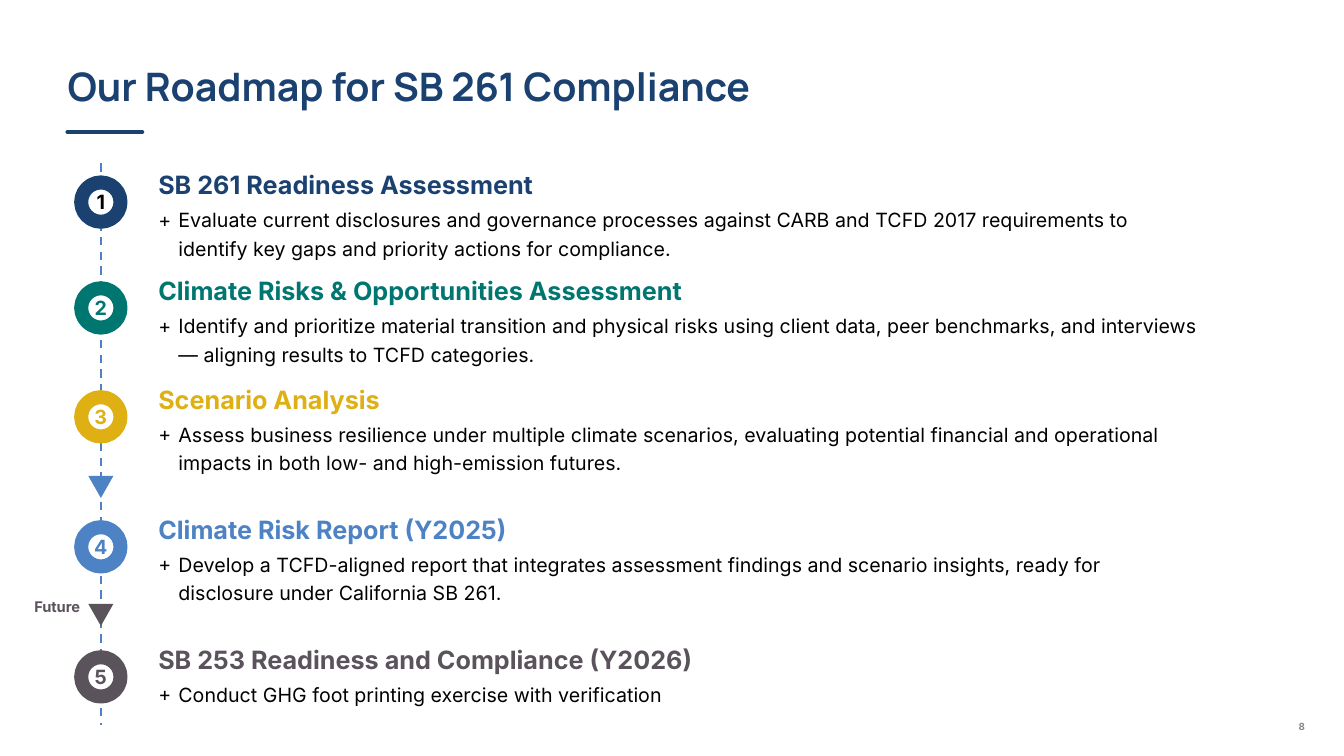
"""Build the SB 261 compliance roadmap slide."""
from lxml import etree
from pptx import Presentation
from pptx.dml.color import RGBColor
from pptx.enum.dml import MSO_LINE
from pptx.enum.shapes import MSO_CONNECTOR, MSO_SHAPE
from pptx.enum.text import MSO_ANCHOR, PP_ALIGN
from pptx.oxml.ns import qn
from pptx.util import Inches, Pt

STRAIGHT = MSO_CONNECTOR.STRAIGHT
OVAL = MSO_SHAPE.OVAL
TRIANGLE = MSO_SHAPE.ISOSCELES_TRIANGLE
DASH = MSO_LINE.DASH
MIDDLE = MSO_ANCHOR.MIDDLE
BOTTOM = MSO_ANCHOR.BOTTOM
CENTER = PP_ALIGN.CENTER

NAVY, BLUE, GRAY = "1B4171", "4D82C5", "5A535B"
TEAL, GOLD = "007671", "DFB014"
BLACK, WHITE = "000000", "FFFFFF"
AXIS_X = 1.0
CIRCLE_SIZE = 0.39
TRIANGLE_WIDTH, TRIANGLE_HEIGHT = 0.25, 0.22

STEPS = [
    (1.81, NAVY, BLACK, "SB 261 Readiness Assessment",
     "Evaluate current disclosures and governance processes against CARB and TCFD 2017 "
     "requirements to identify key gaps and priority actions for compliance."),
    (2.86, TEAL, TEAL, "Climate Risks & Opportunities Assessment",
     "Identify and prioritize material transition and physical risks using client data, "
     "peer benchmarks, and interviews — aligning results to TCFD categories."),
    (3.94, GOLD, GOLD, "Scenario Analysis",
     "Assess business resilience under multiple climate scenarios, evaluating potential "
     "financial and operational impacts in both low- and high-emission futures."),
    (5.23, BLUE, BLUE, "Climate Risk Report (Y2025)",
     "Develop a TCFD-aligned report that integrates assessment findings and scenario "
     "insights, ready for disclosure under California SB 261."),
    (6.52, GRAY, GRAY, "SB 253 Readiness and Compliance (Y2026)",
     "Conduct GHG foot printing exercise with verification"),
]


def color(value):
    return RGBColor.from_string(value)


def write(para, text, size, ink, bold=True, font="Inter"):
    para.text = text
    para.font.name = font
    para.font.size = Pt(size)
    para.font.bold = bold
    para.font.color.rgb = color(ink)


deck = Presentation()
deck.slide_width, deck.slide_height = Inches(13.33), Inches(7.5)
page = deck.slides.add_slide(deck.slide_layouts[5])
shapes = page.shapes

title = shapes.title
title.left, title.top = Inches(0.67), Inches(0.61)
title.width, title.height = Inches(12), Inches(0.48)
frame = title.text_frame
frame.margin_left = frame.margin_right = frame.margin_top = frame.margin_bottom = 0
frame.vertical_anchor = BOTTOM
heading = frame.paragraphs[0]
write(heading, "Our Roadmap for SB 261 Compliance", 28, NAVY, font="Manrope")
heading.alignment = PP_ALIGN.LEFT
heading.line_spacing = 0.9

accent = shapes.add_connector(STRAIGHT, Inches(0.67), Inches(1.31), Inches(1.41), Inches(1.31))
axis = shapes.add_connector(STRAIGHT, Inches(AXIS_X), Inches(1.62), Inches(AXIS_X), Inches(7.19))
for connector, ink, width in [(accent, NAVY, 3), (axis, BLUE, 1.5)]:
    connector.line.color.rgb = color(ink)
    connector.line.width = Pt(width)
    etree.SubElement(connector.element.spPr, qn("a:effectLst"))
accent.element.spPr.find(qn("a:ln")).set("cap", "rnd")
axis.line.dash_style = DASH

for number, (top, ink, digit_ink, name, detail) in enumerate(STEPS, 1):
    circle = shapes.add_shape(OVAL, Inches(AXIS_X - CIRCLE_SIZE / 2), Inches(top),
                              Inches(CIRCLE_SIZE), Inches(CIRCLE_SIZE))
    circle.shadow.inherit = False
    circle.fill.solid()
    circle.fill.fore_color.rgb = color(WHITE)
    circle.line.color.rgb = color(ink)
    circle.line.width = Pt(10)
    frame = circle.text_frame
    frame.margin_left = frame.margin_right = 0
    frame.vertical_anchor = MIDDLE
    write(frame.paragraphs[0], str(number), 14, digit_ink)
    frame.paragraphs[0].alignment = CENTER

    box = shapes.add_textbox(Inches(1.52), Inches(top - 0.24), Inches(10.43), Inches(1.26))
    frame = box.text_frame
    frame.word_wrap = True
    frame.margin_left = frame.margin_right = Inches(0.05)
    para = frame.paragraphs[0]
    bullet = frame.add_paragraph()
    properties = bullet._p.get_or_add_pPr()
    properties.set("marL", str(Inches(0.2)))
    properties.set("indent", str(Inches(-0.2)))
    bullet_color = etree.SubElement(properties, qn("a:buClr"))
    etree.SubElement(bullet_color, qn("a:srgbClr"), val=BLACK)
    etree.SubElement(properties, qn("a:buFont"), typeface="Inter")
    etree.SubElement(properties, qn("a:buChar"), char="+")
    write(para, name, 18, ink)
    write(bullet, detail, 14, BLACK, bold=False)
    for line in (para, bullet):
        line.line_spacing = 1.2
        line.space_after = Pt(3)

for top, ink in [(4.72, BLUE), (5.99, GRAY)]:
    marker = shapes.add_shape(TRIANGLE, Inches(AXIS_X - TRIANGLE_WIDTH / 2), Inches(top),
                              Inches(TRIANGLE_WIDTH), Inches(TRIANGLE_HEIGHT))
    marker.rotation = 180
    marker.shadow.inherit = False
    marker.fill.solid()
    marker.fill.fore_color.rgb = color(ink)
    marker.line.fill.background()

future = shapes.add_textbox(Inches(0.29), Inches(5.85), Inches(1.1), Inches(0.63))
frame = future.text_frame
frame.word_wrap = True
frame.margin_left = frame.margin_right = Inches(0.05)
write(frame.paragraphs[0], "Future", 10.5, GRAY)
frame.paragraphs[0].line_spacing = 1.2

page_number = shapes.add_textbox(Inches(12.88), Inches(7.15), Inches(0.37), Inches(0.26))
frame = page_number.text_frame
frame.word_wrap = True
frame.margin_left = frame.margin_right = frame.margin_top = frame.margin_bottom = 0
write(frame.paragraphs[0], "8", 7, "888888")

deck.save("out.pptx")
